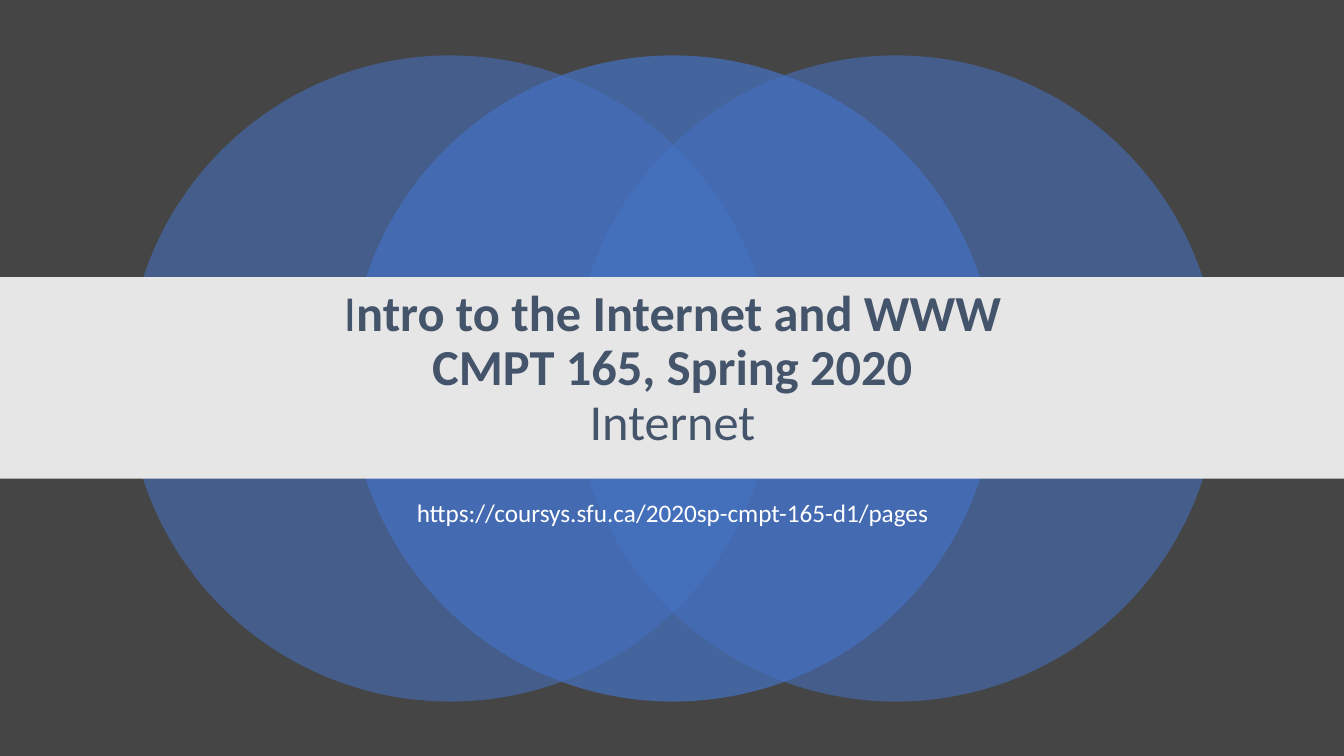
from dataclasses import dataclass

from lxml import etree
from pptx import Presentation
from pptx.dml.color import RGBColor
from pptx.enum.shapes import MSO_SHAPE
from pptx.enum.text import MSO_ANCHOR, MSO_AUTO_SIZE, PP_ALIGN
from pptx.oxml.ns import qn
from pptx.util import Inches, Pt

OVAL, RECT = MSO_SHAPE.OVAL, MSO_SHAPE.RECTANGLE
TOP, MIDDLE = MSO_ANCHOR.TOP, MSO_ANCHOR.MIDDLE
CENTER = PP_ALIGN.CENTER
NO_FIT = MSO_AUTO_SIZE.NONE


@dataclass(frozen=True)
class Theme:
    background: RGBColor = RGBColor.from_string("454545")
    circle: RGBColor = RGBColor.from_string("4472C4")
    band: RGBColor = RGBColor.from_string("E7E6E6")
    title: RGBColor = RGBColor.from_string("44546A")
    link: RGBColor = RGBColor.from_string("FFFFFF")
    font: str = "Calibri"
    title_size: Pt = Pt(36)
    link_size: Pt = Pt(18)


THEME = Theme()


def add_filled(s, kind, box, color, opacity=100):
    """Add a borderless shape; opacity is a percentage."""
    sp = s.shapes.add_shape(kind, *map(Inches, box))
    sp.shadow.inherit = False
    sp.line.fill.background()
    sp.fill.solid()
    sp.fill.fore_color.rgb = color
    if opacity < 100:
        clr = sp.fill._xPr.find(".//" + qn("a:srgbClr"))
        etree.SubElement(clr, qn("a:alpha"), val=str(opacity * 1000))
    return sp


def set_text(sp, box, paragraphs, anchor, size, color):
    """Place a text shape and fill it with paragraphs of (text, bold) runs."""
    sp.left, sp.top, sp.width, sp.height = map(Inches, box)
    tf = sp.text_frame
    frame_format = {"word_wrap": True, "auto_size": NO_FIT, "vertical_anchor": anchor}
    for name, value in frame_format.items():
        setattr(tf, name, value)
    for i, runs in enumerate(paragraphs):
        p = tf.add_paragraph() if i else tf.paragraphs[0]
        for name, value in {"alignment": CENTER, "line_spacing": 0.9, "space_before": Pt(0)}.items():
            setattr(p, name, value)
        for text, bold in runs:
            if text == "\n":
                p.add_line_break()
                continue
            r = p.add_run()
            r.text = text
            for name, value in {"name": THEME.font, "size": size, "bold": bold}.items():
                setattr(r.font, name, value)
            r.font.color.rgb = color


def main():
    prs = Presentation()
    prs.slide_width, prs.slide_height = Inches(13.33), Inches(7.5)
    s = prs.slides.add_slide(prs.slide_layouts[5])
    s.background.fill.solid()
    s.background.fill.fore_color.rgb = THEME.background

    # Overlapping circles, the middle one in front
    for column, opacity in ((0, 55), (2, 55), (1, 70)):
        add_filled(s, OVAL, (1.26 + 2.21 * column, 0.55, 6.41, 6.41), THEME.circle, opacity)

    # Band behind the title
    add_filled(s, RECT, (0, 2.75, 13.33, 2), THEME.band)

    # Title, brought in front of the band
    title = s.shapes.title
    s.shapes._spTree.append(title._element)
    title_lines = [
        [("I", False), ("ntro to the Internet and WWW", True)],
        [("CMPT 165, Spring 2020", True), ("\n", None), ("Internet", False)],
    ]
    set_text(title, (1.67, 2.91, 10, 1.51), title_lines, MIDDLE, THEME.title_size, THEME.title)

    # Course address
    box = (1.67, 4.92, 10, 0.83)
    link = s.shapes.add_textbox(*map(Inches, box))
    address = [[("https://coursys.sfu.ca/2020sp-cmpt-165-d1/pages", False)]]
    set_text(link, box, address, TOP, THEME.link_size, THEME.link)

    prs.save("out.pptx")


if __name__ == "__main__":
    main()
